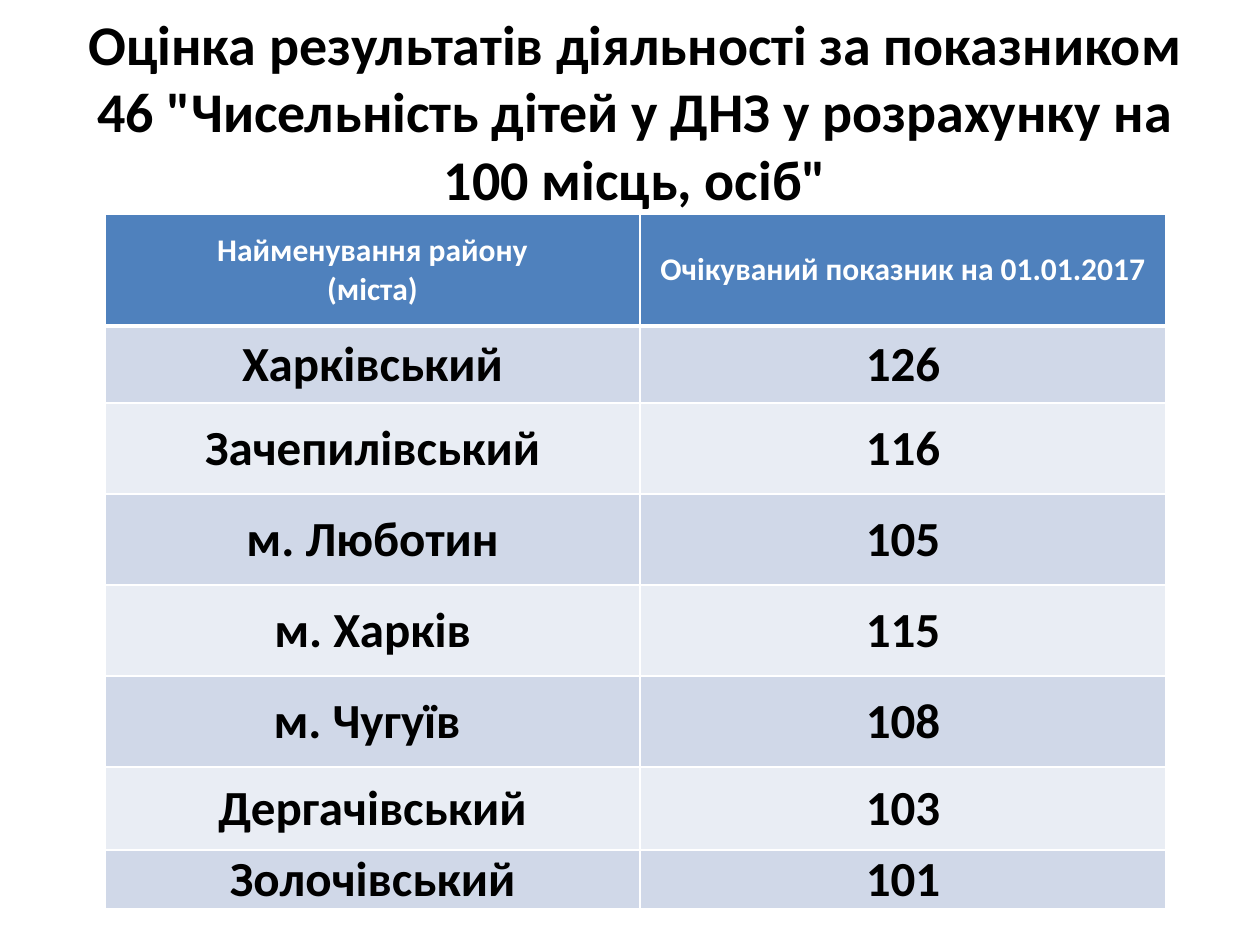
from lxml import etree
from pptx import Presentation
from pptx.dml.color import RGBColor
from pptx.enum import text
from pptx.oxml import ns
from pptx.util import Emu, Pt

PX = 914400 // 126
COLORS = {"black": "000000", "white": "FFFFFF", "header": "4F81BD", "odd": "D0D8E8", "even": "E9EDF4"}
MIDDLE = text.MSO_ANCHOR.MIDDLE


def write(frame, lines, size, color):
    frame.text = lines
    for paragraph in frame.paragraphs:
        paragraph.alignment = text.PP_ALIGN.CENTER
        font = paragraph.runs[0].font
        for key, value in {"name": "Calibri", "size": Pt(size), "bold": True}.items():
            setattr(font, key, value)
        font.color.rgb = RGBColor.from_string(COLORS[color])


def add_border(cell, side, points):
    line = etree.Element(ns.qn(f"a:ln{side}"), w=str(Pt(points)))
    fill = etree.SubElement(line, ns.qn("a:solidFill"))
    etree.SubElement(fill, ns.qn("a:srgbClr"), val=COLORS["white"])
    cell.fill._xPr.insert("LRTB".index(side), line)


deck = Presentation()
deck.slide_width, deck.slide_height = Emu(1260 * PX), Emu(945 * PX)
slide = deck.slides.add_slide(deck.slide_layouts[6])

heading = slide.shapes.add_textbox(*[Emu(n * PX) for n in (54, 16, 1163, 189)]).text_frame
for key, value in {"word_wrap": True, "vertical_anchor": MIDDLE}.items():
    setattr(heading, key, value)
write(heading, 'Оцінка результатів діяльності за показником 46 "Чисельність дітей у ДНЗ у розрахунку на 100 місць, осіб"', 32, "black")

districts = [
    ("Найменування району\n(міста)", "Очікуваний показник на 01.01.2017"),
    ("Харківський", "126"),
    ("Зачепилівський", "116"),
    ("м. Люботин", "105"),
    ("м. Харків", "115"),
    ("м. Чугуїв ", "108"),
    ("Дергачівський", "103"),
    ("Золочівський", "101"),
]
widths = [535, 526]
heights = [112, 77, 91, 91, 91, 91, 83, 59]
last = len(districts) - 1
tight = {"margin_left": Emu(9 * PX), "margin_right": Emu(9 * PX), "margin_top": 0, "margin_bottom": 0}

ratings = slide.shapes.add_table(
    len(districts), 2, *[Emu(n * PX) for n in (105, 214, sum(widths), sum(heights))]
).table
for column, width in zip(ratings.columns, widths):
    column.width = Emu(width * PX)

for r, (district, height) in enumerate(zip(districts, heights)):
    ratings.rows[r].height = Emu(height * PX)
    band = "header" if r == 0 else "odd" if r % 2 else "even"
    for c, words in enumerate(district):
        cell = ratings.cell(r, c)
        write(cell.text_frame, words, 28 if r else 18, "black" if r else "white")
        cell.vertical_anchor = MIDDLE
        if r == last or (r and c):
            for key, value in tight.items():
                setattr(cell, key, value)
        cell.fill.solid()
        cell.fill.fore_color.rgb = RGBColor.from_string(COLORS[band])
        for side in "LRTB":
            add_border(cell, side, 3 if (r, side) in [(0, "B"), (1, "T")] else 1)

deck.save("out.pptx")
